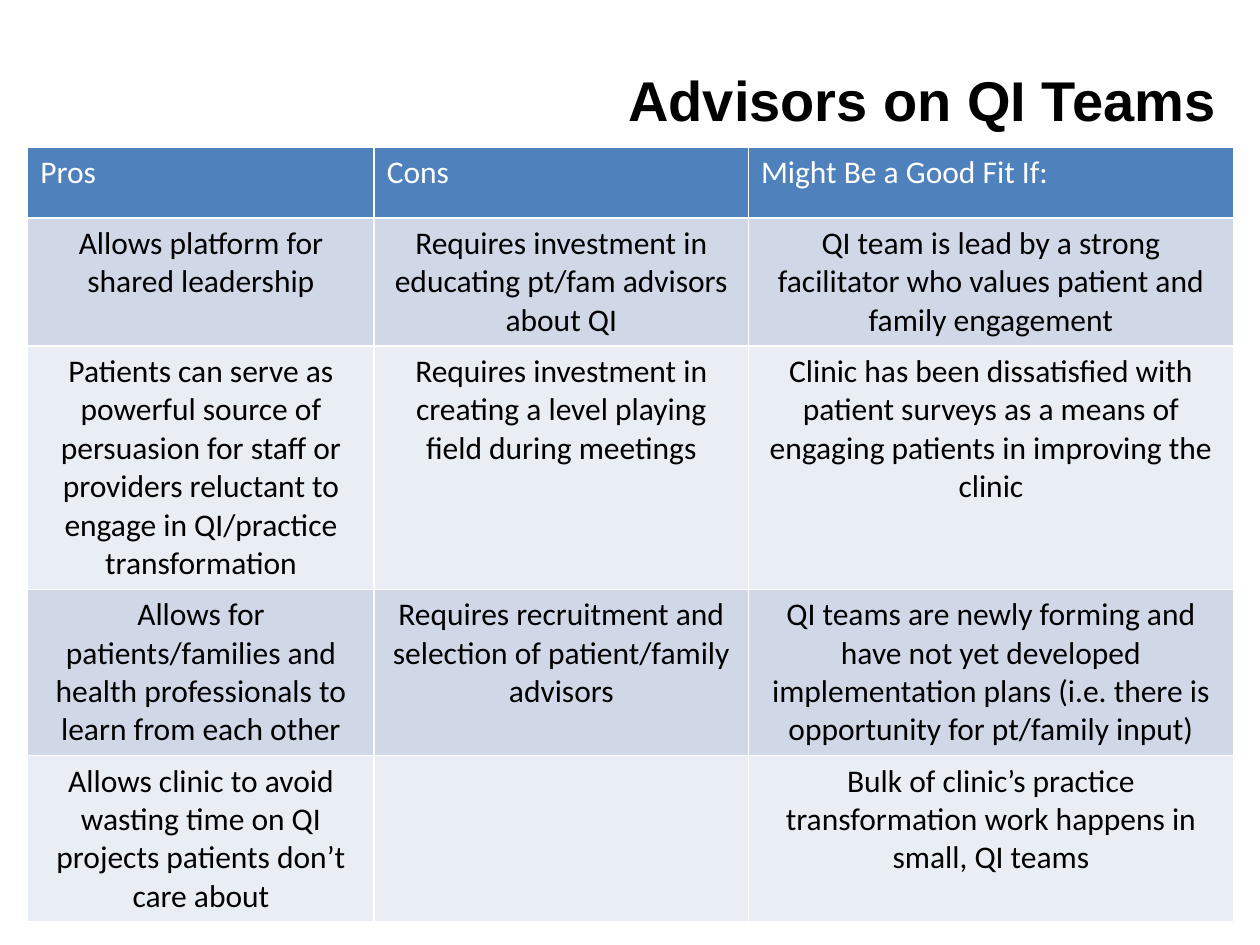
"""Build the slide that weighs advisors on QI teams."""
from pptx import Presentation
from pptx import util as u
from pptx.dml import color
from pptx.enum import text

HEADERS = ["Pros", "Cons", "Might Be a Good Fit If:"]
ROWS = [
    ["Allows platform for shared leadership",
     "Requires investment in educating pt/fam advisors about QI",
     "QI team is lead by a strong facilitator who values patient and family engagement"],
    ["Patients can serve as powerful source of persuasion for staff or providers "
     "reluctant to engage in QI/practice transformation",
     "Requires investment in creating a level playing field during meetings",
     "Clinic has been dissatisfied with patient surveys as a means of engaging "
     "patients in improving the clinic"],
    ["Allows for patients/families and health professionals to learn from each other",
     "Requires recruitment and selection of patient/family advisors",
     "QI teams are newly forming and have not yet developed implementation plans "
     "(i.e. there is opportunity for pt/family input)"],
    ["Allows clinic to avoid wasting time on QI projects patients don’t care about",
     "",
     "Bulk of clinic’s practice transformation work happens in small, QI teams"],
]
COLUMN_WIDTHS = [2.75, 2.97, 3.85]
ROW_HEIGHTS = [0.56, 0.69, 1.84, 0.75, 0.75]
HEADER_FILL, BAND_FILLS = "4F81BD", ["D0D8E8", "E9EDF4"]
TITLE_BOX = (2.66, 0.3, 9.32, 0.98)
TABLE_BOX = (0.22, 1.17, 9.57, 6.06)


def rgb(value):
    """Return the colour for a hex string."""
    return color.RGBColor.from_string(value)


def write(tf, words, size=18, font="Calibri", fill="000000", bold=False,
          align=text.PP_ALIGN.CENTER):
    """Put one formatted paragraph into a text frame."""
    p = tf.paragraphs[0]
    p.alignment = align
    p.font.size = u.Pt(size)
    if words:
        r = p.add_run()
        r.text = words
        r.font.size, r.font.name, r.font.bold = u.Pt(size), font, bold
        r.font.color.rgb = rgb(fill)


def place_title(slide, box):
    """Move the title placeholder into its box and fill it."""
    sp = slide.shapes.title
    sp.left, sp.top, sp.width, sp.height = map(u.Inches, box)
    sp.text_frame.vertical_anchor = text.MSO_ANCHOR.MIDDLE
    write(sp.text_frame, "Advisors on QI Teams", size=32, font="Arial", bold=True)


def place_table(slide, box):
    """Lay out the header and the banded rows within the box."""
    cells = [HEADERS] + ROWS
    frame = slide.shapes.add_table(len(cells), len(HEADERS), *map(u.Inches, box))
    table = frame.table
    for column, share in zip(table.columns, COLUMN_WIDTHS):
        column.width = int(u.Inches(box[2]) * share / sum(COLUMN_WIDTHS))
    for row, height in zip(table.rows, ROW_HEIGHTS):
        row.height = u.Inches(height)
    for i, line in enumerate(cells):
        for j, words in enumerate(line):
            cell = table.cell(i, j)
            cell.fill.solid()
            cell.fill.fore_color.rgb = rgb(BAND_FILLS[(i - 1) % 2] if i else HEADER_FILL)
            if i:
                write(cell.text_frame, words)
            else:
                write(cell.text_frame, words, fill="FFFFFF", align=text.PP_ALIGN.LEFT)
    frame.height = u.Inches(box[3])


def main():
    """Create the presentation and save it."""
    prs = Presentation()
    prs.slide_width, prs.slide_height = u.Inches(10), u.Inches(7.5)
    slide = prs.slides.add_slide(prs.slide_layouts[5])
    place_title(slide, TITLE_BOX)
    place_table(slide, TABLE_BOX)
    prs.save("out.pptx")


if __name__ == "__main__":
    main()
